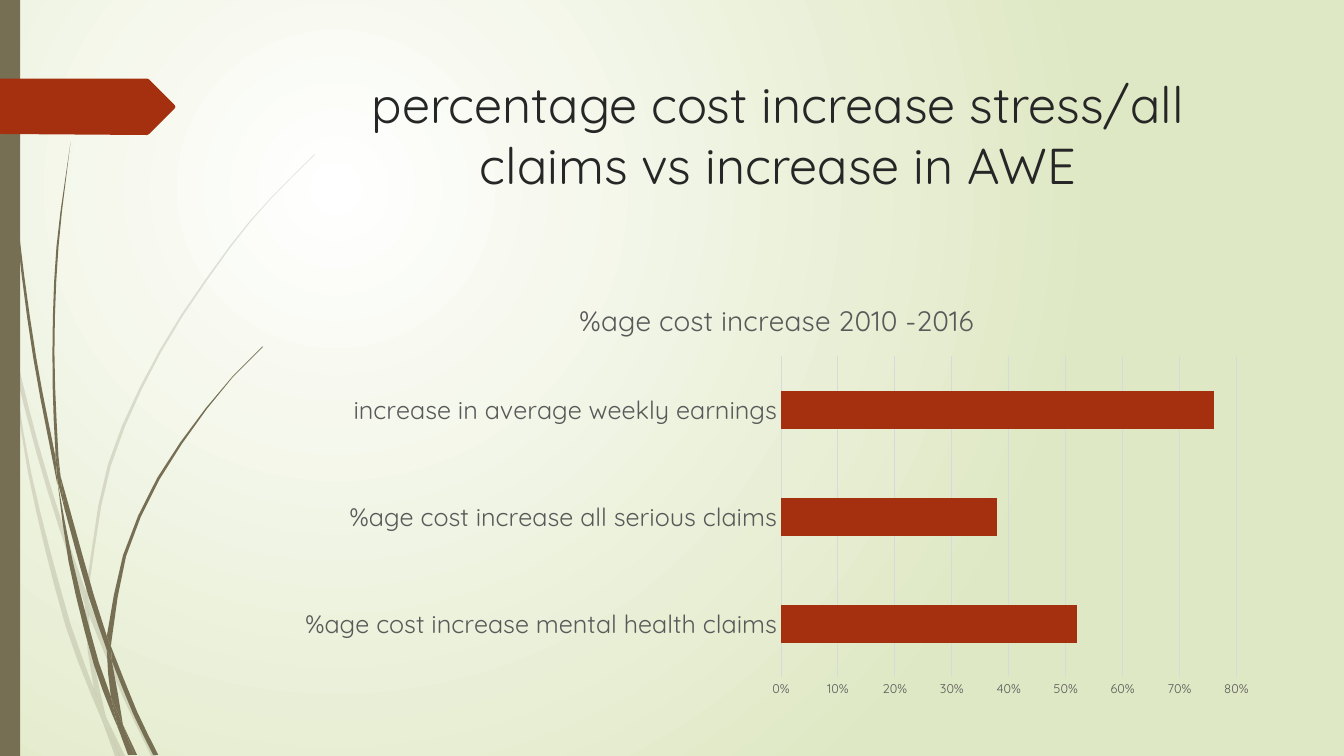
from itertools import pairwise
from math import ceil, dist

from lxml.etree import SubElement
from pptx import Presentation
from pptx.chart.data import CategoryChartData
from pptx.dml.color import RGBColor
from pptx.enum.chart import XL_CHART_TYPE, XL_TICK_MARK
from pptx.enum.shapes import MSO_SHAPE
from pptx.enum.text import MSO_ANCHOR, PP_ALIGN
from pptx.oxml.ns import qn
from pptx.util import Inches, Pt

HEADLINE = "percentage cost increase stress/all claims vs increase in AWE"
CHART_TITLE = "%age cost increase 2010 -2016"
COST_INCREASES = {
    "%age cost increase mental health claims": 0.52,
    "%age cost increase all serious claims": 0.38,
    "increase in average weekly earnings": 0.76,
}

PALE_BLADES = [
    ([(0, 2.82), (0.09, 3.22), (0.11, 3.5)], [(0, 2.99), (0.1, 3.44), (0.11, 3.5)]),
    ([(0.14, 3.45), (0.36, 4.33), (0.62, 5.2), (0.85, 5.86)],
     [(0.17, 3.76), (0.36, 4.49), (0.58, 5.22), (0.84, 5.99)]),
    ([(0.88, 5.96), (1.27, 6.92), (1.55, 7.5)], [(0.88, 6.1), (1.23, 6.94), (1.5, 7.5)]),
    ([(1.05, 7.11), (1.24, 7.5)], [(1.05, 7.11), (1.19, 7.5)]),
    ([(0.11, 3.5), (0.31, 4.69), (0.7, 6.19), (0.93, 6.83), (1.01, 7.14)],
     [(0.11, 3.5), (0.28, 4.7), (0.65, 6.21), (0.92, 6.93), (1.01, 7.14)]),
    ([(0.84, 5.99), (0.88, 6.08), (0.91, 6.46), (1.05, 7.11)],
     [(0.84, 5.99), (0.87, 6.46), (0.93, 6.83), (1.05, 7.11)]),
    ([(3.12, 1.53), (2.68, 1.97), (2.28, 2.44), (1.58, 3.48), (1.07, 4.61), (0.85, 5.86)],
     [(3.12, 1.54), (2.68, 1.98), (2.29, 2.45), (1.6, 3.49), (1.1, 4.62), (0.88, 5.84),
      (0.88, 5.96)]),
    ([(1.01, 7.14), (1.14, 7.5)], [(1.01, 7.14), (1.19, 7.5)]),
    ([(0.85, 5.86), (0.88, 5.96), (0.88, 6.1)], [(0.84, 5.99), (0.88, 6.08)]),
    ([(0.93, 6.83), (1.01, 7.14), (1.19, 7.5)], [(0.93, 6.83), (1.05, 7.11), (1.19, 7.5)]),
]
DARK_BLADES = [
    ([(0.03, 0), (0.07, 1.1), (0.17, 2.33), (0.33, 3.55), (0.57, 4.81)],
     [(0.04, 0), (0.08, 1.09), (0.19, 2.32), (0.36, 3.55), (0.55, 4.53)]),
    ([(0.6, 4.72), (0.93, 5.9), (1.06, 6.31), (1.06, 6.45)],
     [(0.64, 5.05), (0.88, 5.92), (1.06, 6.45)]),
    ([(1.1, 6.41), (1.36, 7.06), (1.57, 7.49)], [(1.11, 6.56), (1.32, 7.08), (1.52, 7.49)]),
    ([(0.57, 4.77), (0.72, 5.56), (0.98, 6.57), (1.1, 6.91), (1.17, 7.22)],
     [(0.57, 4.77), (0.68, 5.57), (0.93, 6.59), (1.11, 7.08), (1.17, 7.22)]),
    ([(0.7, 1.41), (0.56, 2.45), (0.52, 3.49), (0.55, 4.49), (0.6, 4.72)],
     [(0.7, 1.41), (0.58, 2.45), (0.54, 3.49), (0.58, 4.53), (0.6, 4.72)]),
    ([(1.22, 7.19), (1.36, 7.49)], [(1.22, 7.19), (1.33, 7.49)]),
    ([(0.55, 4.49), (0.6, 4.72), (0.64, 5.05)], [(0.55, 4.53), (0.57, 4.77), (0.64, 5.05)]),
    ([(2.6, 3.44), (2.31, 3.73), (2.04, 4.05), (1.56, 4.74), (1.22, 5.51), (1.06, 6.31)],
     [(2.61, 3.44), (2.31, 3.74), (2.05, 4.06), (1.58, 4.76), (1.25, 5.52), (1.11, 6.33),
      (1.1, 6.41)]),
    ([(1.17, 7.22), (1.27, 7.49)], [(1.17, 7.22), (1.31, 7.49)]),
    ([(1.06, 6.45), (1.1, 6.91), (1.22, 7.19)], [(1.06, 6.45), (1.11, 6.56), (1.22, 7.19)]),
    ([(1.06, 6.31), (1.06, 6.45), (1.11, 6.56)], [(1.06, 6.31), (1.1, 6.41), (1.11, 6.56)]),
    ([(1.1, 6.91), (1.17, 7.22), (1.3, 7.49)], [(1.1, 6.91), (1.22, 7.19), (1.33, 7.49)]),
]
ARROW_TAB = [(0, 0.78), (1.46, 0.78), (1.48, 0.79), (1.73, 1.04), (1.74, 1.06),
             (1.73, 1.08), (1.48, 1.33), (1.46, 1.34), (0, 1.33)]

THEME = {
    "font": "Quicksand",
    "glow": "FFFFFF", "backdrop": "DFE8C4", "grass": "766F54", "accent": "A53010",
    "headline": "262626", "label": "595959", "grid": "D9D9D9",
    "headline_size": 36, "chart_title_size": 20, "category_size": 18, "value_size": 9,
}
PALE_OPACITY = 20
CURVE_STEP = 0.45


def colour(part):
    return RGBColor.from_string(THEME[part])


def set_font(font, size, part):
    font.name = THEME["font"]
    font.size = Pt(THEME[size])
    font.bold = False
    font.color.rgb = colour(part)


def paint(shape, part, opacity=100):
    shape.shadow.inherit = False
    shape.fill.solid()
    shape.fill.fore_color.rgb = colour(part)
    shape.line.fill.background()
    if opacity < 100:
        srgb = shape.fill._xPr.find(".//" + qn("a:srgbClr"))
        SubElement(srgb, qn("a:alpha"), val=str(opacity * 1000))


def slope(edge, i):
    before, after = max(i - 1, 0), min(i + 1, len(edge) - 1)
    length = sum(dist(p, q) for p, q in pairwise(edge[before:after + 1]))
    return [(b - a) / length for a, b in zip(edge[before], edge[after])]


def smooth(edge):
    points = [edge[0]]
    for i, (start, end) in enumerate(pairwise(edge)):
        length = dist(start, end)
        leave, arrive = slope(edge, i), slope(edge, i + 1)
        steps = ceil(length / CURVE_STEP)
        for step in range(1, steps + 1):
            t = step / steps
            points.append(tuple(
                (2 * t**3 - 3 * t**2 + 1) * p + (3 * t**2 - 2 * t**3) * q
                + length * ((t**3 - 2 * t**2 + t) * m + (t**3 - t**2) * n)
                for p, q, m, n in zip(start, end, leave, arrive)))
    return points


def draw_outline(slide, points, part, opacity=100):
    corners = [(Inches(x), Inches(y)) for x, y in points]
    builder = slide.shapes.build_freeform(*corners[0])
    builder.add_line_segments(corners[1:])
    paint(builder.convert_to_shape(), part, opacity)


def draw_backdrop(slide):
    fill = slide.background.fill
    fill.gradient()
    for stop, part in zip(fill.gradient_stops, ("glow", "backdrop")):
        stop.color.rgb = colour(part)
    gradient = slide.background._cSld.find(".//" + qn("a:gradFill"))
    gradient.remove(gradient.find(qn("a:lin")))
    circle = SubElement(gradient, qn("a:path"), path="circle")
    SubElement(circle, qn("a:fillToRect"), l="50000", t="50000", r="100000", b="100000")


def draw_decoration(slide):
    for blades, opacity in ((PALE_BLADES, PALE_OPACITY), (DARK_BLADES, 100)):
        for left, right in blades:
            draw_outline(slide, smooth(left) + smooth(right)[::-1], "grass", opacity)
    stripe = slide.shapes.add_shape(MSO_SHAPE.RECTANGLE, 0, 0, Inches(0.2), Inches(7.5))
    paint(stripe, "grass")
    draw_outline(slide, ARROW_TAB, "accent")


def draw_headline(slide):
    headline = slide.shapes.add_textbox(
        Inches(2.84), Inches(0.68), Inches(9.75), Inches(1.4)).text_frame
    headline.word_wrap = True
    headline.vertical_anchor = MSO_ANCHOR.TOP
    paragraph = headline.paragraphs[0]
    paragraph.alignment = PP_ALIGN.CENTER
    run = paragraph.add_run()
    run.text = HEADLINE
    set_font(run.font, "headline_size", "headline")


def draw_chart(slide):
    data = CategoryChartData(number_format="0%")
    data.categories = list(COST_INCREASES)
    data.add_series(CHART_TITLE, list(COST_INCREASES.values()))
    chart = slide.shapes.add_chart(
        XL_CHART_TYPE.BAR_CLUSTERED, Inches(2.83), Inches(2.79), Inches(9.75), Inches(4.21),
        data).chart
    chart.has_legend = False
    chart.font.name = THEME["font"]
    chart.has_title = True
    title = chart.chart_title.text_frame.paragraphs[0].add_run()
    title.text = CHART_TITLE
    set_font(title.font, "chart_title_size", "label")
    chart.chart_title.include_in_layout = False

    bars = chart.plots[0]
    bars.gap_width = 182
    bars.vary_by_categories = False
    bars.series[0].format.fill.solid()
    bars.series[0].format.fill.fore_color.rgb = colour("accent")

    categories, values = chart.category_axis, chart.value_axis
    for axis, size in ((categories, "category_size"), (values, "value_size")):
        axis.major_tick_mark = axis.minor_tick_mark = XL_TICK_MARK.NONE
        set_font(axis.tick_labels.font, size, "label")
    values.has_major_gridlines = True
    for line in (categories.format.line, values.major_gridlines.format.line):
        line.color.rgb = colour("grid")
        line.width = Pt(0.75)
    values.format.line.fill.background()
    values.minimum_scale, values.maximum_scale, values.major_unit = 0, 0.8, 0.1
    values.tick_labels.number_format = "0%"
    values.tick_labels.number_format_is_linked = False


def main():
    deck = Presentation()
    deck.slide_width, deck.slide_height = Inches(13.33), Inches(7.5)
    slide = deck.slides.add_slide(deck.slide_layouts[6])
    draw_backdrop(slide)
    draw_decoration(slide)
    draw_headline(slide)
    draw_chart(slide)
    deck.save("out.pptx")


if __name__ == "__main__":
    main()
